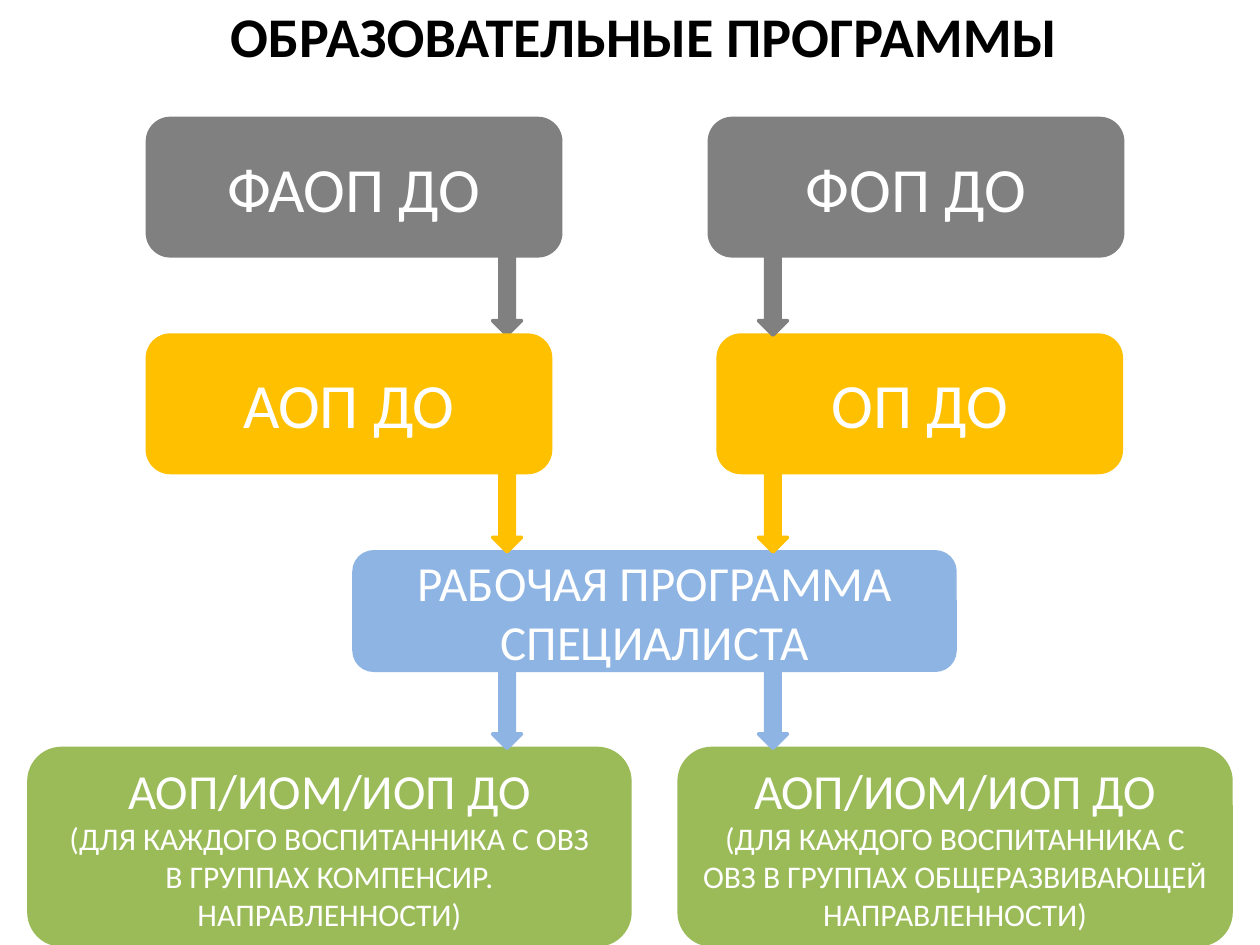
from dataclasses import dataclass

from pptx import Presentation
from pptx.dml.color import RGBColor
from pptx.enum.shapes import MSO_SHAPE as Shape
from pptx.enum.text import MSO_ANCHOR as Anchor, PP_ALIGN as Align
from pptx.util import Inches, Pt


@dataclass(frozen=True)
class Theme:
    font: str = "Calibri"
    black: RGBColor = RGBColor(0, 0, 0)
    white: RGBColor = RGBColor(255, 255, 255)
    federal: RGBColor = RGBColor(0x80, 0x80, 0x80)
    basic: RGBColor = RGBColor(0xFF, 0xC0, 0x00)
    working: RGBColor = RGBColor(0x8E, 0xB4, 0xE3)
    individual: RGBColor = RGBColor(0x9B, 0xBB, 0x59)
    title: int = 32
    large: int = 36
    medium: int = 28
    small: int = 18
    outline: int = 2


THEME = Theme()

# Both flows run down fixed columns; arrows fill the gaps between tiers
ARROW_LEFTS = (3.91, 6.02)
ARROW_WIDTH, ARROW_HEIGHT = 0.23, 0.63


def write_lines(frame, lines, color, bold=False):
    """Write (text, size) lines as centred paragraphs."""
    frame.word_wrap = True
    frame.vertical_anchor = Anchor.MIDDLE
    frame.text = "\n".join(text for text, _ in lines)
    for paragraph, (_, size) in zip(frame.paragraphs, lines):
        paragraph.alignment = Align.CENTER
        font = paragraph.runs[0].font
        font.name, font.size, font.bold = THEME.font, Pt(size), bold
        font.color.rgb = color


def add_block(slide, preset, box, color):
    block = slide.shapes.add_shape(preset, *map(Inches, box))
    block.shadow.inherit = False
    block.fill.solid()
    block.fill.fore_color.rgb = color
    block.line.color.rgb = color
    block.line.width = Pt(THEME.outline)
    return block


def add_title(slide, box, text):
    title = slide.shapes.add_textbox(*map(Inches, box))
    write_lines(title.text_frame, [(text, THEME.title)], THEME.black, bold=True)


def add_tier(slide, top, height, color, programs):
    """Place one row of programs, each given as (left, width, lines)."""
    for left, width, lines in programs:
        program = add_block(slide, Shape.ROUNDED_RECTANGLE,
                            (left, top, width, height), color)
        write_lines(program.text_frame, lines, THEME.white)


def add_arrow(slide, left, top, color):
    add_block(slide, Shape.DOWN_ARROW,
              (left, top, ARROW_WIDTH, ARROW_HEIGHT), color)


def add_arrow_pair(slide, top, color):
    for left in ARROW_LEFTS:
        add_arrow(slide, left, top, color)


def main():
    prs = Presentation()
    prs.slide_width, prs.slide_height = Inches(10), Inches(7.5)
    slide = prs.slides.add_slide(prs.slide_layouts[6])

    add_title(slide, (0.86, 0, 8.5, 0.55), "ОБРАЗОВАТЕЛЬНЫЕ ПРОГРАММЫ")

    # Federal programs; the left arrow ends behind the next tier
    add_tier(slide, 0.94, 1.09, THEME.federal, [
        (1.17, 3.28, [("ФАОП ДО", THEME.large)]),
        (5.63, 3.28, [("ФОП ДО", THEME.large)]),
    ])
    add_arrow(slide, ARROW_LEFTS[0], 2.03, THEME.federal)

    # Programs of the organisation
    add_tier(slide, 2.66, 1.09, THEME.basic, [
        (1.17, 3.2, [("АОП ДО", THEME.large)]),
        (5.7, 3.2, [("ОП ДО", THEME.large)]),
    ])
    add_arrow(slide, ARROW_LEFTS[1], 2.03, THEME.federal)

    # Specialist's working program
    add_tier(slide, 4.38, 0.94, THEME.working, [
        (2.81, 4.77, [("РАБОЧАЯ ПРОГРАММА СПЕЦИАЛИСТА", THEME.medium)]),
    ])
    add_arrow_pair(slide, 3.75, THEME.basic)

    # Individual programs
    heading = ("АОП/ИОМ/ИОП ДО", THEME.medium)
    add_tier(slide, 5.94, 1.56, THEME.individual, [
        (0.23, 4.77, [
            heading,
            ("(ДЛЯ КАЖДОГО ВОСПИТАННИКА С ОВЗ", THEME.small),
            ("В ГРУППАХ КОМПЕНСИР. НАПРАВЛЕННОСТИ)", THEME.small),
        ]),
        (5.39, 4.38, [
            heading,
            ("(ДЛЯ КАЖДОГО ВОСПИТАННИКА С ОВЗ В ГРУППАХ "
             "ОБЩЕРАЗВИВАЮЩЕЙ НАПРАВЛЕННОСТИ)", THEME.small),
        ]),
    ])
    add_arrow_pair(slide, 5.31, THEME.working)

    prs.save("out.pptx")


if __name__ == "__main__":
    main()
